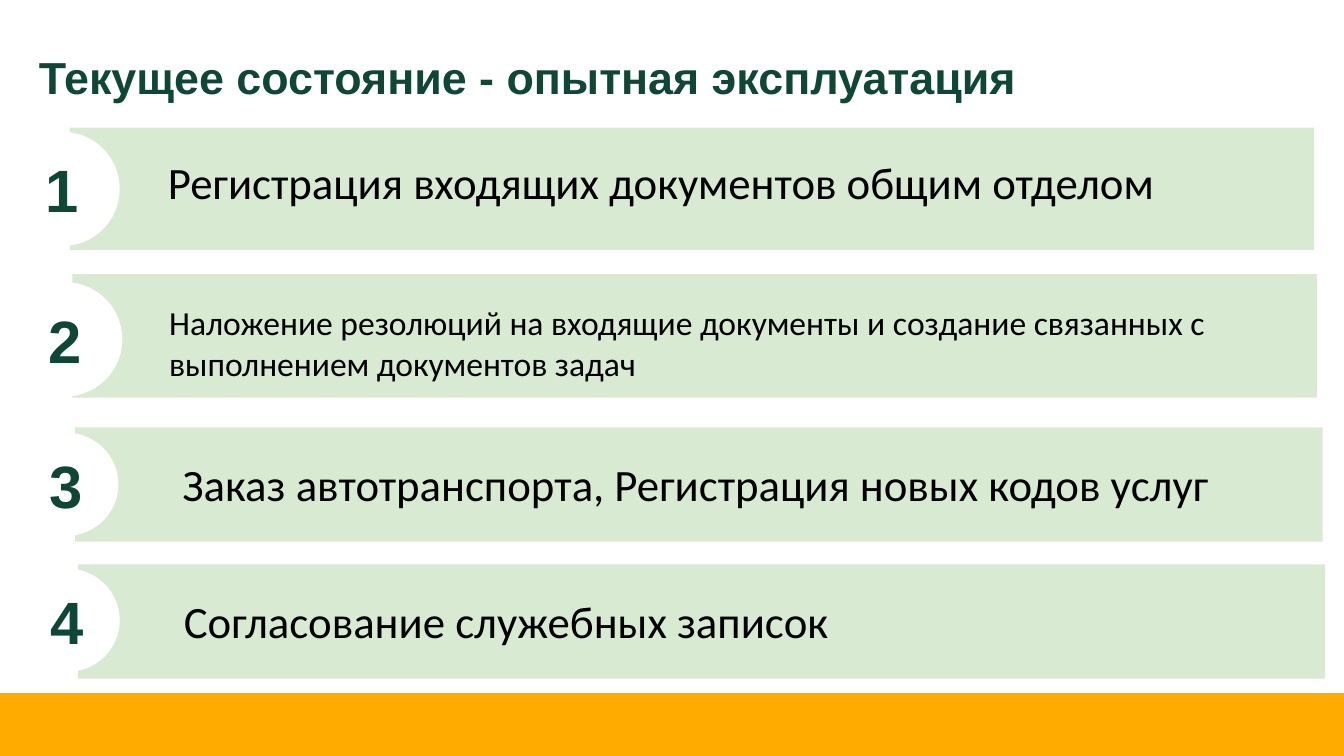
from dataclasses import dataclass
from pptx import Presentation
from pptx.dml.color import RGBColor as RGB
from pptx.enum.shapes import MSO_SHAPE as Kind
from pptx.enum.text import MSO_ANCHOR as Anchor, MSO_AUTO_SIZE as Fit, PP_ALIGN as Align
from pptx.util import Pt


@dataclass(frozen=True)
class Theme:
    green: RGB = RGB(0x0F, 0x47, 0x36)
    pale: RGB = RGB(0xD9, 0xEA, 0xD3)
    amber: RGB = RGB(0xFF, 0xAB, 0x00)
    white: RGB = RGB(0xFF, 0xFF, 0xFF)
    black: RGB = RGB(0, 0, 0)
    head: str = "Arial"
    body: str = "Calibri"
    title: int = 24
    digit: int = 32


@dataclass(frozen=True)
class Step:
    text: str
    size: int
    top: float
    tall: float
    label: tuple
    disc: tuple


THEME = Theme()
BAND_X, SHIFT = 37.4, 1.45

STEPS = [
    Step("Регистрация входящих документов общим отделом",
         24, 68.4, 65.5, (82.8, 79.2, 598.3, 36), (2.9, 70.6, 61.2, 61.2)),
    Step("Наложение резолюций на входящие документы и создание связанных с выполнением документов задач",
         18, 146.9, 66.2, (83.5, 158.4, 598.3, 51), (4.3, 151.2, 61.2, 61.2)),
    Step("Заказ автотранспорта, Регистрация новых кодов услуг",
         24, 229, 61.2, (90.7, 241.2, 590.4, 36), (7.2, 231.8, 56.2, 55.4)),
    Step("Согласование служебных записок",
         24, 302.4, 61.2, (91.4, 314.6, 590.4, 36), (7.9, 304.6, 56.2, 55.4)),
]


def add_form(slide, kind, box, fill):
    form = slide.shapes.add_shape(kind, *map(Pt, box))
    form.shadow.inherit = False
    form.fill.solid()
    form.fill.fore_color.rgb = fill
    form.line.fill.background()
    return form


def write(frame, text, face, size, color, bold=False, align=Align.LEFT, anchor=Anchor.TOP):
    frame.word_wrap = True
    frame.auto_size = Fit.NONE
    frame.vertical_anchor = anchor
    para = frame.paragraphs[0]
    para.alignment = align
    run = para.add_run()
    run.text = text
    font = run.font
    font.name, font.size, font.bold = face, Pt(size), bold
    font.color.rgb = color


def set_title(slide, text):
    title = slide.shapes.title
    title.left, title.top, title.width, title.height = map(Pt, (13.7, 23, 687.6, 36))
    write(title.text_frame, text, THEME.head, THEME.title, THEME.green, True)


def add_label(slide, step):
    label = slide.shapes.add_textbox(*map(Pt, step.label))
    write(label.text_frame, step.text, THEME.body, step.size, THEME.black)


def add_disc(slide, box, digit):
    disc = add_form(slide, Kind.OVAL, box, THEME.white)
    write(disc.text_frame, digit, THEME.head, THEME.digit, THEME.green, True,
          Align.CENTER, Anchor.MIDDLE)


def add_step(slide, index, step):
    wide = 666.7 if index < 2 else 668.2
    band = (BAND_X + index * SHIFT, step.top, wide, step.tall)
    add_form(slide, Kind.RECTANGLE, band, THEME.pale)
    add_label(slide, step)
    add_disc(slide, step.disc, str(index + 1))


def main():
    deck = Presentation()
    deck.slide_width, deck.slide_height = Pt(720), Pt(405)
    slide = deck.slides.add_slide(deck.slide_layouts[5])
    add_form(slide, Kind.RECTANGLE, (0, 371.4, 720, 33.6), THEME.amber)
    set_title(slide, "Текущее состояние - опытная эксплуатация")
    for index, step in enumerate(STEPS):
        add_step(slide, index, step)
    deck.save("out.pptx")


if __name__ == "__main__":
    main()
